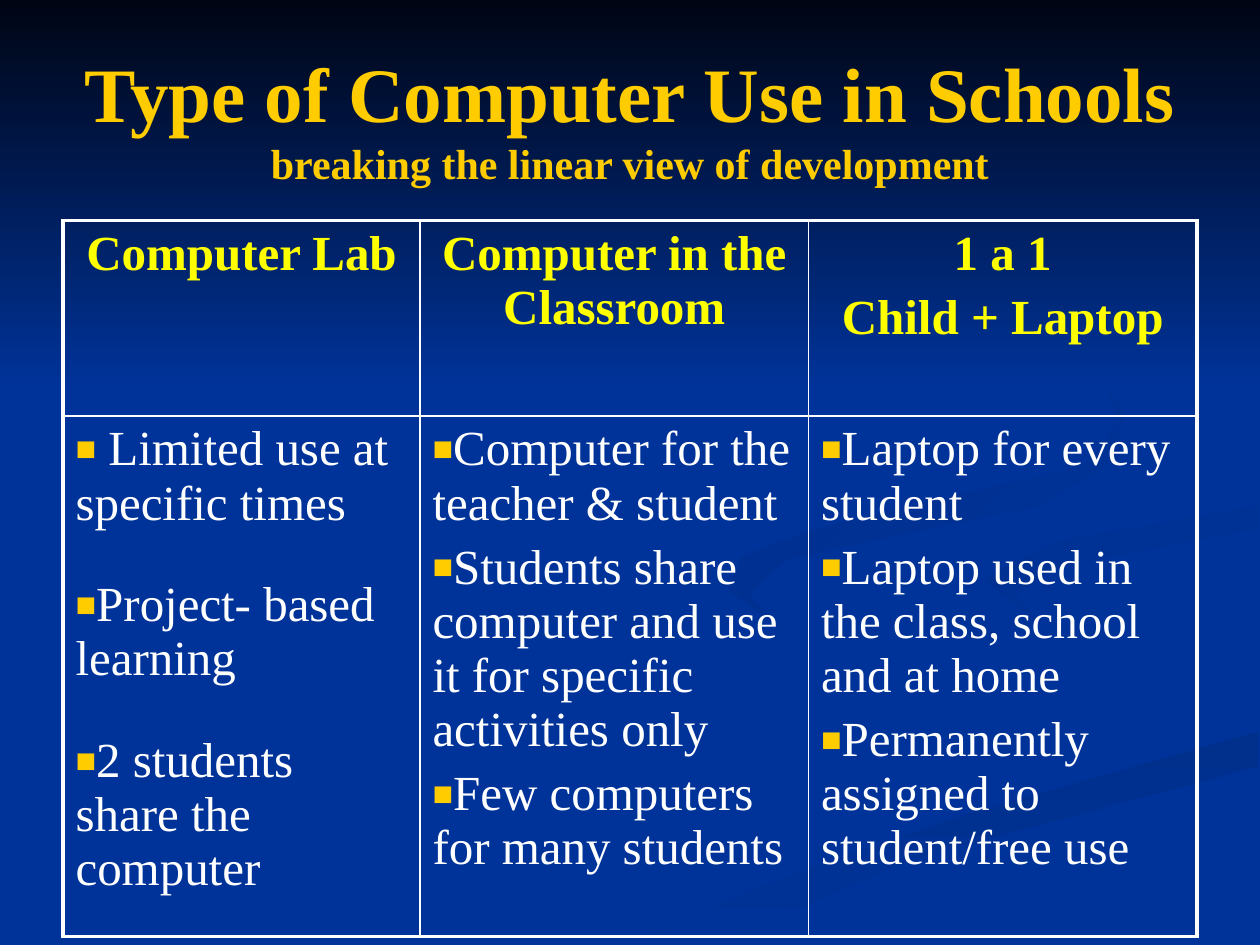
import pptx
import pptx.util
import pptx.dml.color
import pptx.enum.text
import pptx.enum.shapes
import pptx.oxml.ns
import lxml.etree

Pt = pptx.util.Pt
qn = pptx.oxml.ns.qn
CENTER = pptx.enum.text.PP_ALIGN.CENTER
LEFT = pptx.enum.text.PP_ALIGN.LEFT

COLORS = {
    "background": "003399", "night": "000514", "gold": "FFCC00",
    "yellow": "FFFF00", "white": "FFFFFF",
    "band": "002F8C", "loop": "003091", "curl": "002F8E",
}


def rgb(name):
    return pptx.dml.color.RGBColor.from_string(COLORS[name])


def paint(shape, start, angle):
    """Fade from a colour to the background at a clockwise angle, no outline."""
    shape.shadow.inherit = False
    shape.line.fill.background()
    shape.fill.gradient()
    shape.fill.gradient_angle = 360 - angle
    for stop, name in zip(shape.fill.gradient_stops, (start, "background")):
        stop.color.rgb = rgb(name)


presentation = pptx.Presentation()
presentation.slide_width, presentation.slide_height = Pt(720), Pt(540)
slide = presentation.slides.add_slide(presentation.slide_layouts[5])
slide.background.fill.solid()
slide.background.fill.fore_color.rgb = rgb("background")

# Background ribbons: start colour, angle, outline in points
ribbons = [
    ("band", 90, [(362, 539), (411, 539), (520, 491), (719, 438),
                  (719, 418), (550, 466), (431, 508)]),
    ("loop", 45, [(562, 331), (595, 357), (580, 340), (607, 323), (719, 302),
                  (719, 289), (601, 310)]),
    ("curl", 45, [(492, 310), (594, 289), (640, 261), (641, 233), (631, 220),
                  (640, 241), (620, 266), (467, 302), (424, 318), (416, 337),
                  (448, 360), (428, 340), (449, 320)]),
]
for color, angle, outline in ribbons:
    builder = slide.shapes.build_freeform(*outline[0], scale=Pt(1))
    builder.add_line_segments(outline[1:], close=True)
    paint(builder.convert_to_shape(), color, angle)

# Dark sky at the top
sky = slide.shapes.add_shape(
    pptx.enum.shapes.MSO_SHAPE.RECTANGLE, 0, 0, Pt(720), Pt(222))
paint(sky, "night", 90)

# Title, brought in front of the background
title = slide.shapes.title
slide.shapes._spTree.append(title._element)
for name, value in {"left": 36, "top": 21.6, "width": 648, "height": 90}.items():
    setattr(title, name, Pt(value))
title.text_frame.vertical_anchor = pptx.enum.text.MSO_ANCHOR.MIDDLE
paragraph = title.text_frame.paragraphs[0]
paragraph.alignment = CENTER
for text, size in (("Type of Computer Use in Schools", 44),
                   ("breaking the linear view of development", 24)):
    if paragraph.runs:
        paragraph.add_line_break()
    run = paragraph.add_run()
    run.text = text
    for name, value in {"name": "Times New Roman", "size": Pt(size), "bold": True}.items():
        setattr(run.font, name, value)
    run.font.color.rgb = rgb("gold")

# Comparison table
rows = [
    [["Computer Lab"], ["Computer in the Classroom"], ["1 a 1", "Child + Laptop"]],
    [[" Limited use at specific times", "Project- based learning",
      "2 students share the computer"],
     ["Computer for the teacher & student",
      "Students share computer and use it for specific activities only",
      "Few computers for many students"],
     ["Laptop for every student", "Laptop used in the class, school and at home",
      "Permanently assigned to student/free use"]],
]
table = slide.shapes.add_table(2, 3, Pt(36), Pt(126), Pt(648), Pt(409)).table
table.first_row = table.horz_banding = False
for column, width in zip(table.columns, (204, 222, 222)):
    column.width = Pt(width)
for row, height in zip(table.rows, (111.6, 297.4)):
    row.height = Pt(height)

for i, row in enumerate(rows):
    header = i == 0
    for j, texts in enumerate(row):
        cell = table.cell(i, j)

        # Borders: thick on the outside, thin inside
        properties = cell._tc.get_or_add_tcPr()
        outer = {"lnL": j == 0, "lnR": j == 2, "lnT": header, "lnB": not header}
        for side, thick in outer.items():
            line = lxml.etree.SubElement(
                properties, qn("a:" + side), w=str(Pt(2.25 if thick else 1)))
            fill = lxml.etree.SubElement(line, qn("a:solidFill"))
            lxml.etree.SubElement(fill, qn("a:srgbClr"), val=COLORS["white"])
        cell.fill.background()

        # Text: centred headings, bulleted lists
        frame = cell.text_frame
        for k, text in enumerate(texts):
            paragraph = frame.add_paragraph() if k else frame.paragraphs[0]
            paragraph.alignment = CENTER if header else LEFT
            if k:
                paragraph.space_before = Pt(27 if j == 0 else 5.6)
            run = paragraph.add_run()
            run.text = text
            for name, value in {"name": "Times New Roman", "size": Pt(28),
                                "bold": header}.items():
                setattr(run.font, name, value)
            run.font.color.rgb = rgb("yellow" if header else "white")
            if not header:
                bullet = paragraph._p.get_or_add_pPr()
                color = lxml.etree.SubElement(bullet, qn("a:buClr"))
                lxml.etree.SubElement(color, qn("a:srgbClr"), val=COLORS["gold"])
                lxml.etree.SubElement(bullet, qn("a:buSzPct"), val="70000")
                lxml.etree.SubElement(bullet, qn("a:buFont"), typeface="Times New Roman")
                lxml.etree.SubElement(bullet, qn("a:buChar"), char="■")

presentation.save("out.pptx")
